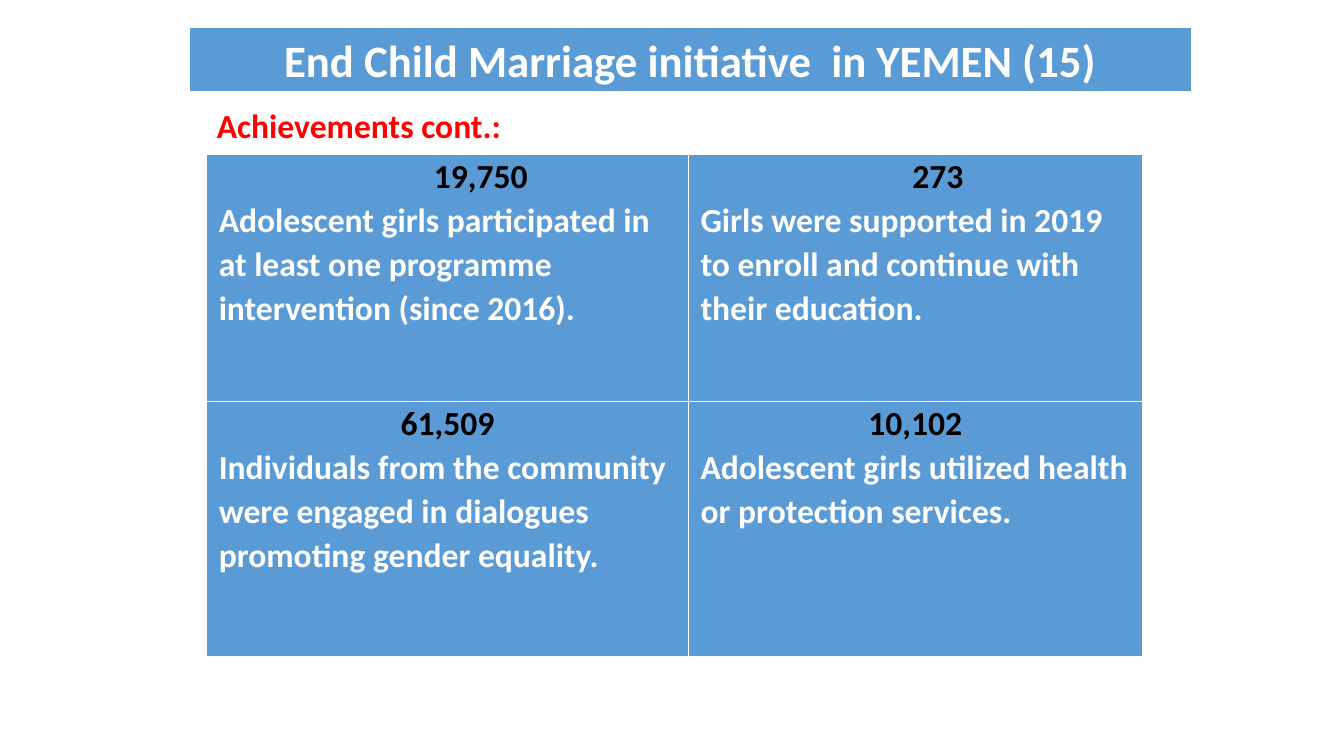
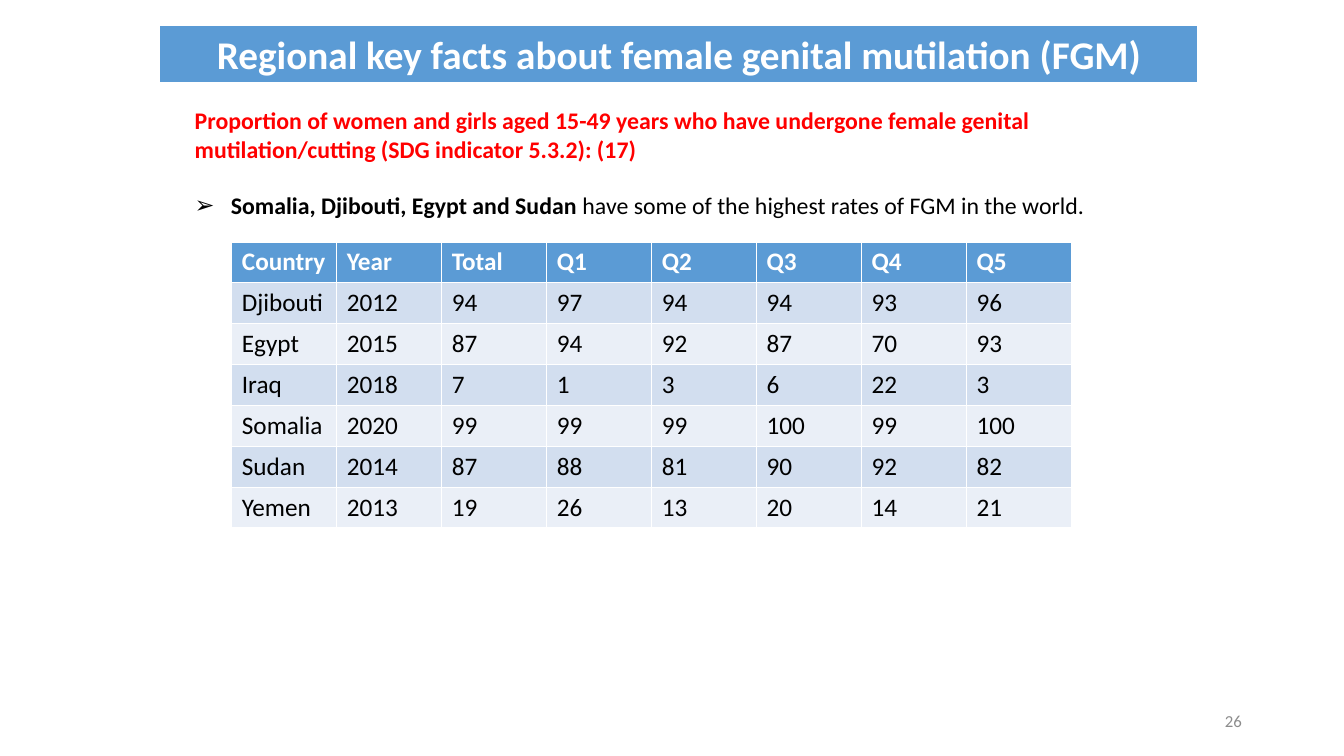
from pptx import Presentation
from pptx import util as u
from pptx.dml.color import RGBColor
from pptx.enum import text as t
from lxml import etree

COLORS = {"band": "5B9BD5", "white": "FFFFFF", "black": "000000", "red": "FF0000",
          "odd_row": "D2DEEF", "even_row": "EAEFF7", "number": "8C8C8C"}
FONT = "Calibri"

prs = Presentation()
prs.slide_width, prs.slide_height = u.Inches(13.33), u.Inches(7.5)
COL, ROW = prs.slide_width / 100, prs.slide_height / 100  # grid of 100 by 100


def grid(left, top, width, height):
    return int(left * COL), int(top * ROW), int(width * COL), int(height * ROW)


def style(paragraph, size, color, bold=False, indent=0, hanging=0):
    """Set font and indents (in inches) of a paragraph."""
    font = paragraph.font
    font.name, font.size, font.bold = FONT, u.Pt(size), bold
    font.color.rgb = RGBColor.from_string(COLORS[color])
    paragraph.space_before = u.Pt(0)
    props = paragraph._p.get_or_add_pPr()
    props.set("marL", str(u.Inches(indent)))
    props.set("indent", str(-u.Inches(hanging)))


# Title band and red heading on each slide
pages = [
    ("End Child Marriage initiative  in YEMEN (15)", 32, (14.03, 3.6, 74.7, 8.53),
     "Achievements cont.:", 24, (15.38, 13.2, 37.58, 6.67)),
    ("Regional key facts about female genital mutilation (FGM)", 28,
     (11.85, 3.33, 77.32, 7.6),
     "Proportion of women and girls aged 15-49 years who have undergone female genital "
     "mutilation/cutting (SDG indicator 5.3.2): (17)", 17, (13.73, 13.33, 72.6, 18)),
]
slides = []
for title, title_size, title_area, heading, heading_size, heading_area in pages:
    slide = prs.slides.add_slide(prs.slide_layouts[1])
    band, body = slide.placeholders
    for part, words, size, color, area in (
            (band, title, title_size, "white", title_area),
            (body, heading, heading_size, "red", heading_area)):
        part.left, part.top, part.width, part.height = grid(*area)
        frame = part.text_frame
        frame.text = words
        frame.auto_size = t.MSO_AUTO_SIZE.NONE
        style(frame.paragraphs[0], size, color, bold=True)
    band.fill.solid()
    band.fill.fore_color.rgb = RGBColor.from_string(COLORS["band"])
    band.line.color.rgb = RGBColor.from_string(COLORS["white"])
    band.line.width = u.Pt(1.5)
    etree.SubElement(body.text_frame.paragraphs[0]._p.get_or_add_pPr(),
                     "{http://schemas.openxmlformats.org/drawingml/2006/main}buNone")
    slides.append(slide)
achievements_slide, facts_slide = slides

# Achievements: figure, its indent, explanation
achievements = [
    [("19,750", 0.66, "Adolescent girls participated in at least one programme "
                      "intervention (since 2016)."),
     ("273", 0.45, "Girls were supported in 2019 to enroll and continue with "
                   "their education.")],
    [("61,509", 0, "Individuals from the community were engaged in dialogues "
                   "promoting gender equality."),
     ("10,102", 0, "Adolescent girls utilized health or protection services.")],
]
results = achievements_slide.shapes.add_table(2, 2, *grid(15.38, 20.4, 69.6, 66.4)).table
for column, share in zip(results.columns, (35.85, 33.75)):
    column.width = int(share * COL)
for row, share in zip(results.rows, (32.67, 33.73)):
    row.height = int(share * ROW)
for r, entries in enumerate(achievements):
    for c, (figure, indent, explanation) in enumerate(entries):
        cell = results.cell(r, c)
        cell.fill.solid()
        cell.fill.fore_color.rgb = RGBColor.from_string(COLORS["band"])
        cell.margin_left = cell.margin_right = u.Inches(0.12)
        cell.margin_top = cell.margin_bottom = 0
        cell.text = f"{figure}\n{explanation}"
        top_line, detail = cell.text_frame.paragraphs
        style(top_line, 24, "black", bold=True, indent=indent)
        style(detail, 24, "white", bold=True)
        top_line.alignment = t.PP_ALIGN.CENTER
        top_line.line_spacing = detail.line_spacing = 1.07

# Key fact with arrow bullet
fact = facts_slide.placeholders[1].text_frame.add_paragraph()
style(fact, 17, "black", indent=0.36, hanging=0.36)
fact.space_before = u.Pt(20)
bullet = etree.SubElement(fact._p.get_or_add_pPr(),
                          "{http://schemas.openxmlformats.org/drawingml/2006/main}buChar")
bullet.set("char", "➢")
countries = fact.add_run()
countries.text = "Somalia, Djibouti, Egypt and Sudan "
countries.font.bold = True
fact.add_run().text = "have some of the highest rates of FGM in the world."

# Rates by country and wealth quintile
rates = [
    ("Country", "Year", "Total", "Q1", "Q2", "Q3", "Q4", "Q5"),
    ("Djibouti", 2012, 94, 97, 94, 94, 93, 96),
    ("Egypt", 2015, 87, 94, 92, 87, 70, 93),
    ("Iraq", 2018, 7, 1, 3, 6, 22, 3),
    ("Somalia", 2020, 99, 99, 99, 100, 99, 100),
    ("Sudan", 2014, 87, 88, 81, 90, 92, 82),
    ("Yemen", 2013, 19, 26, 13, 20, 14, 21),
]
rate_table = facts_slide.shapes.add_table(
    len(rates), len(rates[0]), *grid(17.25, 32, 62.48, 37.87)).table
for r, values in enumerate(rates):
    header = r == 0
    fill = "band" if header else "odd_row" if r % 2 else "even_row"
    for c, value in enumerate(values):
        cell = rate_table.cell(r, c)
        cell.text = str(value)
        cell.fill.solid()
        cell.fill.fore_color.rgb = RGBColor.from_string(COLORS[fill])
        style(cell.text_frame.paragraphs[0], 18, "white" if header else "black", bold=header)

# Slide number
number = facts_slide.shapes.add_textbox(*grid(70.65, 92.67, 22.5, 5.33)).text_frame
number.text = "26"
number.word_wrap = True
number.vertical_anchor = t.MSO_ANCHOR.MIDDLE
style(number.paragraphs[0], 12, "number")
number.paragraphs[0].alignment = t.PP_ALIGN.RIGHT

prs.save("out.pptx")
